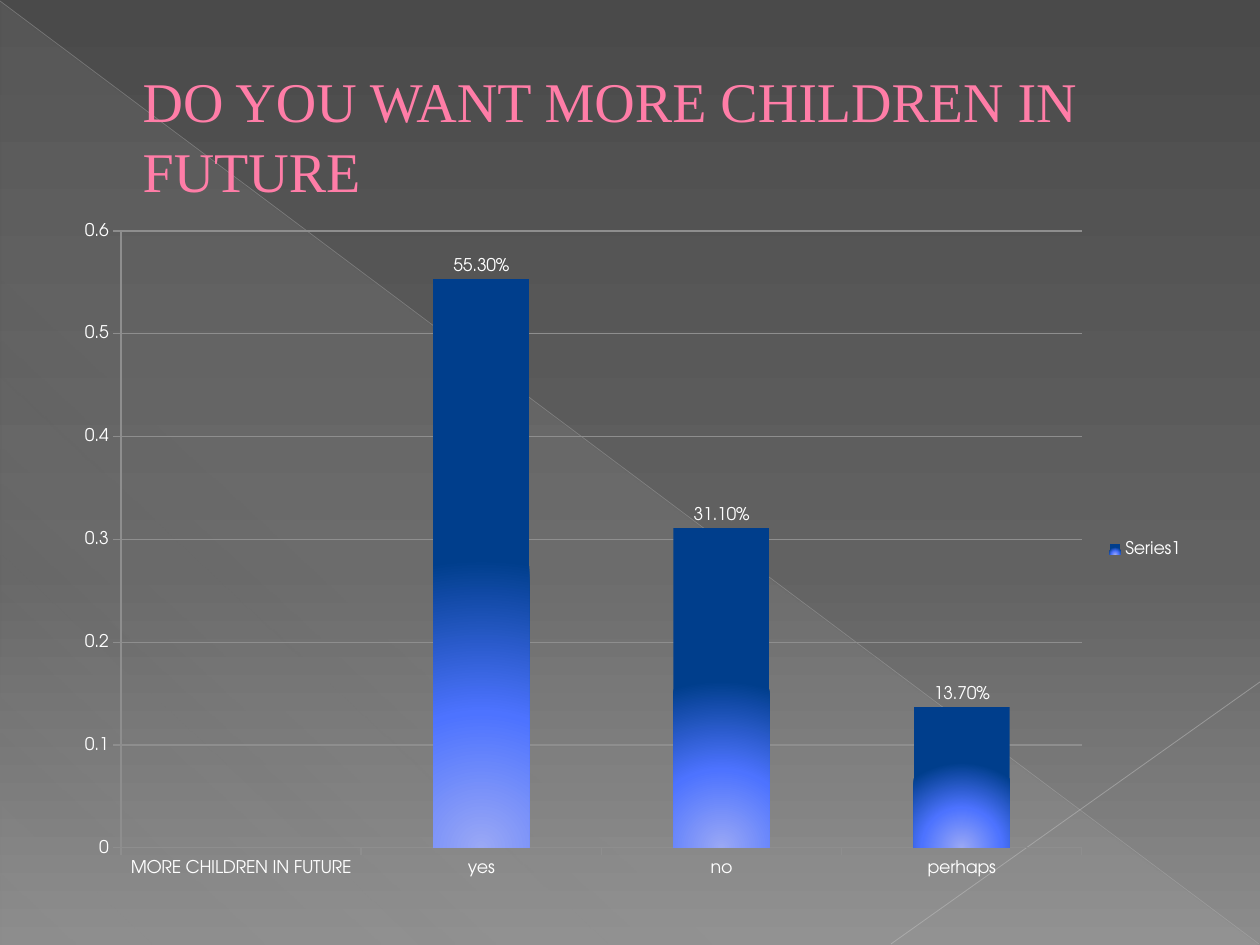
from lxml import etree
from pptx import Presentation
from pptx.chart import data as chart_data
from pptx.dml import color
from pptx.enum import chart as chart_enum, shapes, text
from pptx.oxml import ns
from pptx.util import Emu, Pt

PX = 9144000 // 1260


def px(*lengths):
    return [Emu(length * PX) for length in lengths]


def rgb(value):
    return color.RGBColor.from_string(value)


def add_child(parent, tag, **attributes):
    return etree.SubElement(parent, ns.qn(tag), {k: str(v) for k, v in attributes.items()})


def add_color(parent, value, opacity=100):
    node = add_child(parent, "a:srgbClr", val=value)
    if opacity < 100:
        add_child(node, "a:alpha", val=opacity * 1000)


class SlideBuilder:
    heading = {"name": "Times New Roman", "size": Pt(32), "bold": False}
    label = {"name": "TeX Gyre Adventor", "size": Pt(10), "bold": False}
    grid_color = "8E8E8E"

    def __init__(self, presentation):
        self.slide = presentation.slides.add_slide(presentation.slide_layouts[5])

    def style(self, font, formats, font_color):
        for name, value in formats.items():
            setattr(font, name, value)
        font.color.rgb = rgb(font_color)

    def gradient(self, fill, element, stops, angle=None):
        fill.gradient()
        gradient = next(element.iter(ns.qn("a:gradFill")))
        for child in list(gradient):
            gradient.remove(child)
        stop_list = add_child(gradient, "a:gsLst")
        for position, *paint in stops:
            add_color(add_child(stop_list, "a:gs", pos=position * 1000), *paint)
        if angle is None:
            circle = add_child(gradient, "a:path", path="circle")
            add_child(circle, "a:fillToRect", l=50000, t=100000, r=50000, b=0)
        else:
            add_child(gradient, "a:lin", ang=angle * 60000, scaled=0)

    def background(self, stops, angle):
        self.gradient(self.slide.background.fill, self.slide._element, stops, angle)

    def triangle(self, box, stops, angle):
        shape = self.slide.shapes.add_shape(shapes.MSO_SHAPE.RIGHT_TRIANGLE, *px(*box))
        shape.shadow.inherit = False
        shape.line.fill.background()
        self.gradient(shape.fill, shape._element, stops, angle)

    def line(self, ends, line_color, width, opacity):
        connector = self.slide.shapes.add_connector(shapes.MSO_CONNECTOR.STRAIGHT, *px(*ends))
        connector.line.width = Pt(width)
        connector.line.color.rgb = rgb(line_color)
        solid = next(connector._element.iter(ns.qn("a:solidFill")))
        solid.clear()
        add_color(solid, line_color, opacity)
        add_child(connector._element.spPr, "a:effectLst")

    def title(self, box, wording, font_color, outline):
        title = self.slide.shapes.title
        self.slide.shapes._spTree.append(title._element)
        title.left, title.top, title.width, title.height = px(*box)
        frame = title.text_frame
        formats = {"word_wrap": True, "auto_size": text.MSO_AUTO_SIZE.NONE,
                   "vertical_anchor": text.MSO_ANCHOR.MIDDLE}
        for name, value in formats.items():
            setattr(frame, name, value)
        paragraph = frame.paragraphs[0]
        paragraph.alignment = text.PP_ALIGN.LEFT
        paragraph.line_spacing = 1.04
        paragraph._p.get_or_add_pPr().set("marL", str(67 * PX))
        run = paragraph.add_run()
        run.text = wording
        self.style(run.font, self.heading, font_color)
        line = add_child(run._r.get_or_add_rPr(), "a:ln", w=Pt(0.5))
        add_color(add_child(line, "a:solidFill"), outline)
        run._r.rPr.insert(0, line)

    def column_chart(self, box, categories, name, values, stops, plot_box):
        data = chart_data.CategoryChartData(number_format="0.00%")
        data.categories = categories
        data.add_series(name, values)
        kind = chart_enum.XL_CHART_TYPE.COLUMN_CLUSTERED
        chart = self.slide.shapes.add_chart(kind, *px(*box), data).chart
        self.style(chart.font, self.label, "FFFFFF")
        chart.has_title = False
        chart.has_legend = True
        chart.legend.position = chart_enum.XL_LEGEND_POSITION.RIGHT
        chart.legend.include_in_layout = False

        for axis in (chart.category_axis, chart.value_axis):
            axis.major_tick_mark = chart_enum.XL_TICK_MARK.OUTSIDE
            axis.format.line.color.rgb = rgb(self.grid_color)
            axis.format.line.width = Pt(0.75)
        axis = chart.value_axis
        formats = {"minimum_scale": 0, "maximum_scale": 0.6, "major_unit": 0.1,
                   "has_major_gridlines": True}
        for key, value in formats.items():
            setattr(axis, key, value)
        axis.major_gridlines.format.line.color.rgb = rgb(self.grid_color)
        axis.tick_labels.number_format = "General"
        axis.tick_labels.number_format_is_linked = False

        plot = chart.plots[0]
        plot.gap_width = 150
        plot.vary_by_categories = False
        series = plot.series[0]
        self.gradient(series.format.fill, series._element, stops)
        labels = series.data_labels
        formats = {"show_value": True, "number_format": "0.00%",
                   "number_format_is_linked": False,
                   "position": chart_enum.XL_LABEL_POSITION.OUTSIDE_END}
        for key, value in formats.items():
            setattr(labels, key, value)
        self.style(labels.font, self.label, "FFFFFF")
        self.place_plot(chart, box, plot_box)

    def place_plot(self, chart, box, plot_box):
        area = next(chart._chartSpace.iter(ns.qn("c:plotArea")))
        for old in area.findall(ns.qn("c:layout")):
            area.remove(old)
        layout = add_child(area, "c:layout")
        area.insert(0, layout)
        manual = add_child(layout, "c:manualLayout")
        add_child(manual, "c:layoutTarget", val="inner")
        add_child(manual, "c:xMode", val="edge")
        add_child(manual, "c:yMode", val="edge")
        left, top, width, height = plot_box
        fractions = {"x": (left - box[0]) / box[2], "y": (top - box[1]) / box[3],
                     "w": width / box[2], "h": height / box[3]}
        for key, value in fractions.items():
            add_child(manual, f"c:{key}", val=round(value, 4))


def main():
    presentation = Presentation()
    presentation.slide_width, presentation.slide_height = px(1260, 945)
    builder = SlideBuilder(presentation)
    builder.background([(0, "4A4A4A"), (60, "626262"), (100, "8C8C8C")], 90)
    builder.triangle((1, 2, 1258, 943),
                     [(0, "D2D2D2", 10), (70, "D2D2D2", 8), (100, "D2D2D2", 1)], 133)
    builder.line((0, 1, 1259, 944), "BFBFBF", 0.39, 35)
    builder.line((1260, 682, 891, 944), "C6C6C6", 0.47, 45)
    builder.title((63, 37, 1134, 193), "DO YOU WANT MORE CHILDREN IN FUTURE",
                  "FF7DA7", "B12761")
    builder.column_chart((63, 210, 1134, 679),
                         ["MORE CHILDREN IN FUTURE", "yes", "no", "perhaps"],
                         "Series1", [None, 0.553, 0.311, 0.137],
                         [(0, "9AA8F5"), (47, "4D73FF"), (100, "003E8C")],
                         (121, 231, 961, 617))
    presentation.save("out.pptx")


if __name__ == "__main__":
    main()
